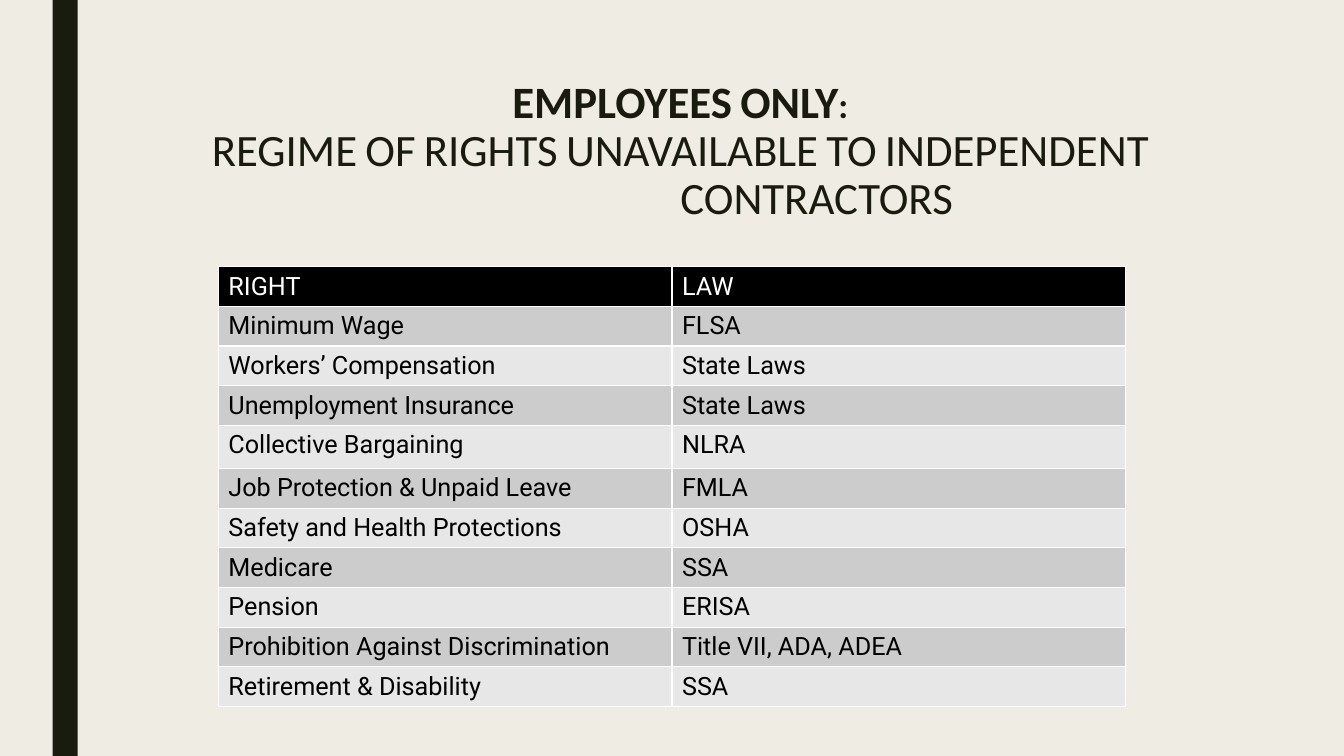
from pptx import Presentation
from pptx.dml.color import RGBColor
from pptx.enum.shapes import MSO_SHAPE
from pptx.enum.text import MSO_ANCHOR, MSO_AUTO_SIZE, PP_ALIGN
from pptx.util import Emu, Pt

RECT = MSO_SHAPE.RECTANGLE
TOP = MSO_ANCHOR.TOP
CENTER = PP_ALIGN.CENTER
NO_FIT = MSO_AUTO_SIZE.NONE
DARK = "191B0E"


def px(n):
    return Emu(n * 9525)


def paint(fill, color):
    fill.solid()
    fill.fore_color.rgb = RGBColor.from_string(color)


deck = Presentation()
deck.slide_width, deck.slide_height = px(1280), px(720)
slide = deck.slides.add_slide(deck.slide_layouts[5])
paint(slide.background.fill, "EFEDE3")

# Side bar
bar = slide.shapes.add_shape(RECT, px(50), 0, px(24), px(720))
bar.shadow.inherit = False
paint(bar.fill, DARK)
bar.line.fill.background()

# Title
title = slide.shapes.title
title.left, title.top, title.width, title.height = px(144), px(72), px(1008), px(156)
frame = title.text_frame
frame.word_wrap = True
frame.auto_size = NO_FIT
frame.vertical_anchor = TOP
para = frame.paragraphs[0]
para.alignment = CENTER
para.line_spacing = 0.89
para.font.name = "Calibri"
para.font.size = Pt(32)
paint(para.font.fill, DARK)
lead = para.add_run()
lead.text = "EMPLOYEES ONLY:"
lead.font.bold = True
para.add_line_break()
rest = para.add_run()
rest.text = "REGIME OF RIGHTS UNAVAILABLE TO INDEPENDENT CONTRACTORS"
for run in (lead, rest):
    run._r.get_or_add_rPr().set("cap", "small")

# Table of rights and laws
rights = [
    ("RIGHT", "LAW"),
    ("Minimum Wage", "FLSA"),
    ("Workers’ Compensation", "State Laws"),
    ("Unemployment Insurance", "State Laws"),
    ("Collective Bargaining", "NLRA"),
    ("Job Protection & Unpaid Leave", "FMLA"),
    ("Safety and Health Protections", "OSHA"),
    ("Medicare", "SSA"),
    ("Pension", "ERISA"),
    ("Prohibition Against Discrimination", "Title VII, ADA, ADEA"),
    ("Retirement & Disability", "SSA"),
]
table = slide.shapes.add_table(len(rights), 2, px(208), px(254), px(864), px(425)).table
for r, texts in enumerate(rights):
    table.rows[r].height = px(41 if r == 4 else 34)
    back = "000000" if r == 0 else ("E7E7E7", "CCCCCC")[r % 2]
    for c, text in enumerate(texts):
        cell = table.cell(r, c)
        cell.text = text
        paint(cell.fill, back)
        font = cell.text_frame.paragraphs[0].font
        font.name = "Roboto"
        font.size = Pt(18)
        font.bold = False
        paint(font.fill, "FFFFFF" if r == 0 else "000000")

deck.save("out.pptx")
